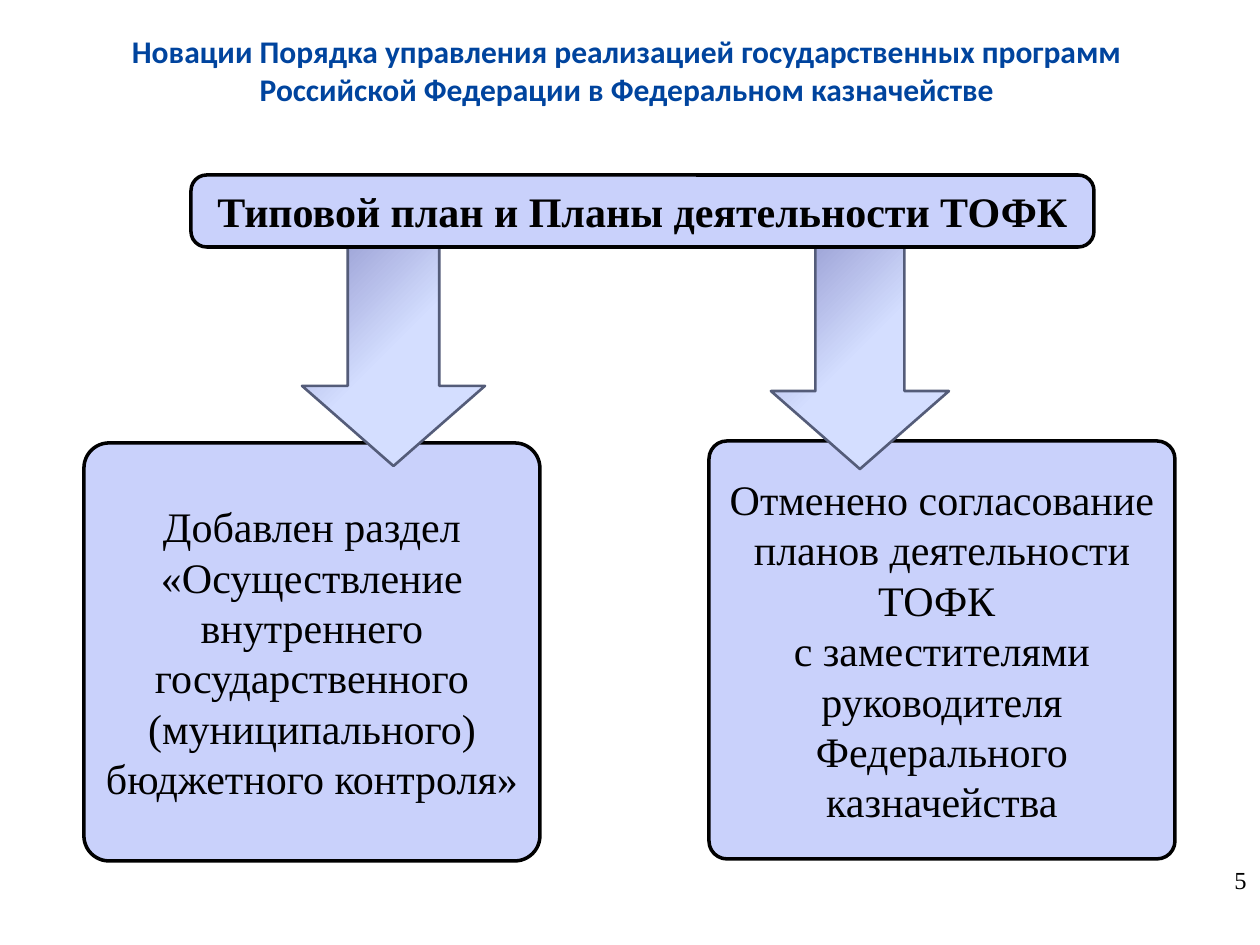
"""Build the slide on changes to the standard plan and the activity plans."""
from dataclasses import dataclass

from lxml import etree
from pptx import Presentation, util as u
from pptx.dml.color import RGBColor
from pptx.enum import shapes, text
from pptx.oxml.ns import qn

PX = 914400 / 126


@dataclass(frozen=True)
class Theme:
    ink: str = "000000"
    title: str = "00449E"
    box: str = "C9D1FB"
    arrow_line: str = "545C79"
    arrow_stops: tuple = ((0, "8488C4"), (53, "D4DEFF"), (83, "D4DEFF"), (100, "96AB94"))
    head_font: str = "Calibri"
    body_font: str = "Times New Roman"
    title_size: int = 18
    body_size: int = 24
    number_size: int = 14


def px(*values):
    return [u.Emu(round(v * PX)) for v in values]


def rgb(value):
    return RGBColor.from_string(value)


def write(tf, content, *, font, size, color, bold=False,
          align=text.PP_ALIGN.CENTER, anchor=text.MSO_ANCHOR.TOP):
    tf.word_wrap = True
    tf.vertical_anchor = anchor
    p = tf.paragraphs[0]
    p.alignment = align
    for i, line in enumerate(content.split("\n")):
        if i:
            p.add_line_break()
        r = p.add_run()
        r.text = line
        r.font.name, r.font.size, r.font.bold = font, u.Pt(size), bold
        r.font.color.rgb = rgb(color)


class Deck:
    def __init__(self, prs, theme):
        self.theme = theme
        self.s = prs.slides.add_slide(prs.slide_layouts[6])

    def shape(self, kind, at, adjustments, line, width):
        sp = self.s.shapes.add_shape(kind, *px(*at))
        sp.shadow.inherit = False
        for i, value in enumerate(adjustments):
            sp.adjustments[i] = value
        sp.line.color.rgb = rgb(line)
        sp.line.width = u.Pt(width)
        return sp

    def box(self, content, at, corner, bold=False):
        t = self.theme
        sp = self.shape(shapes.MSO_SHAPE.ROUNDED_RECTANGLE, at, [corner], t.ink, 2)
        sp.fill.solid()
        sp.fill.fore_color.rgb = rgb(t.box)
        write(sp.text_frame, content, font=t.body_font, size=t.body_size,
              color=t.ink, bold=bold, anchor=text.MSO_ANCHOR.MIDDLE)

    def arrow(self, at):
        t = self.theme
        sp = self.shape(shapes.MSO_SHAPE.DOWN_ARROW, at, [0.5, 0.438], t.arrow_line, 1.5)
        sp.fill.gradient()
        sp.fill.gradient_angle = 315
        stops = sp._element.spPr.find(".//" + qn("a:gsLst"))
        for gs in list(stops):
            stops.remove(gs)
        for pos, color in t.arrow_stops:
            gs = etree.SubElement(stops, qn("a:gs"), pos=str(pos * 1000))
            etree.SubElement(gs, qn("a:srgbClr"), val=color)

    def label(self, content, at, **style):
        write(self.s.shapes.add_textbox(*px(*at)).text_frame, content, **style)


def main():
    prs = Presentation()
    prs.slide_width, prs.slide_height = px(1260, 945)
    t = Theme()
    deck = Deck(prs, t)
    deck.box("Отменено согласование планов деятельности ТОФК \n"
             "с заместителями руководителя Федерального казначейства",
             (709, 441, 466, 418), 0.043)
    deck.box("Добавлен раздел «Осуществление внутреннего государственного "
             "(муниципального) бюджетного контроля»", (84, 443, 456, 418), 0.06)
    deck.arrow((771, 212, 178, 257))
    deck.arrow((302, 208, 183, 258))
    deck.label("5", (1200, 859, 59, 66), font=t.body_font, size=t.number_size,
               color=t.ink, align=text.PP_ALIGN.RIGHT)
    deck.box("Типовой план и Планы деятельности ТОФК", (191, 175, 903, 72), 0.217, bold=True)
    deck.label("Новации Порядка управления реализацией государственных программ "
               "Российской Федерации в Федеральном казначействе",
               (116, 26, 1022, 89), font=t.head_font, size=t.title_size,
               color=t.title, bold=True)
    prs.save("out.pptx")


if __name__ == "__main__":
    main()
